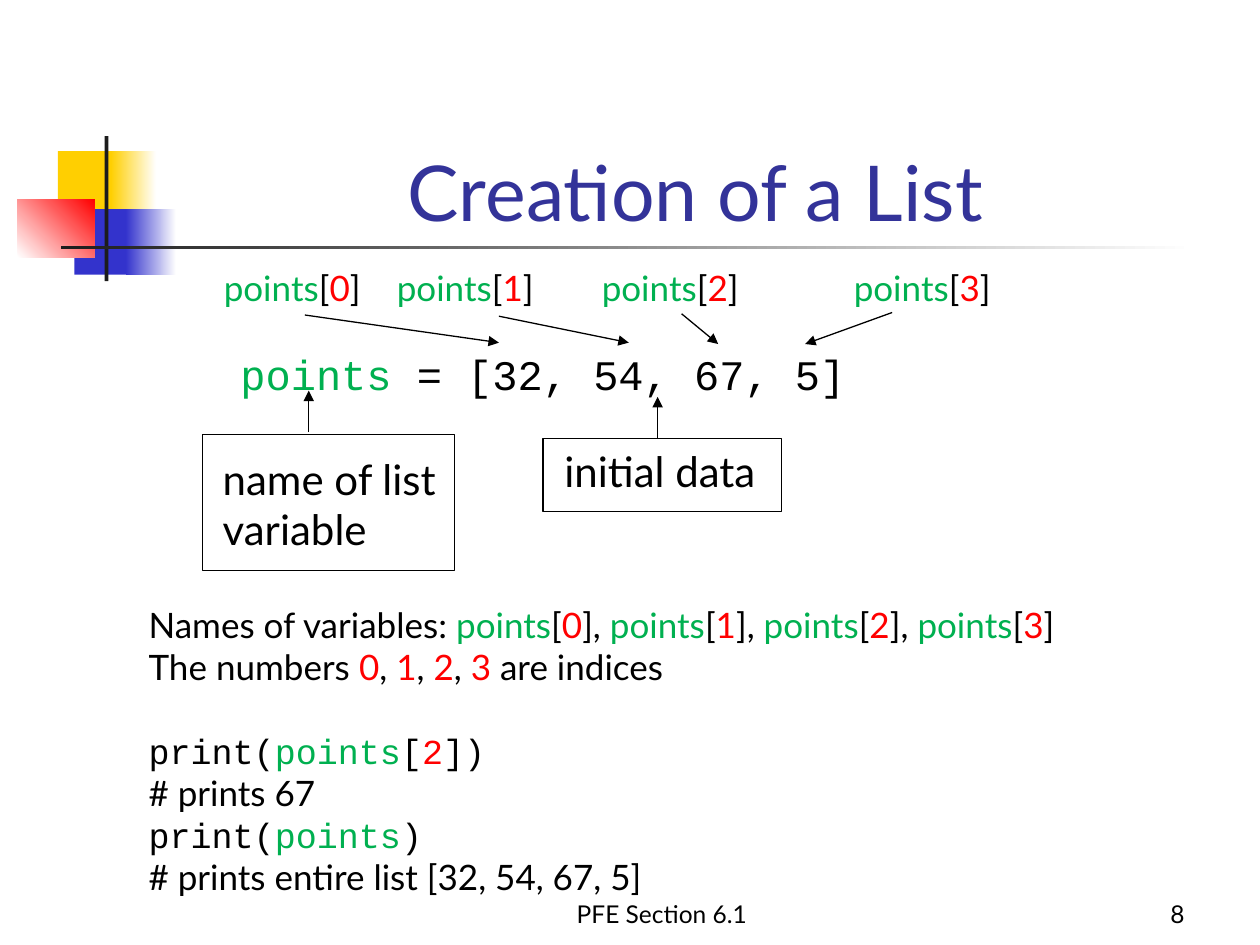
from pptx import Presentation
from pptx.dml.color import RGBColor as Rgb
from pptx.enum.shapes import MSO_CONNECTOR as Link, MSO_SHAPE as Kind
from pptx.enum.text import MSO_ANCHOR as Anchor, PP_ALIGN as Align
from pptx.oxml import parse_xml
from pptx.oxml.ns import nsdecls
from pptx.util import Pt

THEME = {
    "sans": "Lato", "mono": "Courier New",
    "title": 44, "big": 24, "text": 20, "foot": 14, "line": 0.75,
    "k": "000000", "g": "00B050", "r": "FF0000", "t": "333399",
    "gold": "FFCF01", "blue": "3333CC", "dark": "1C1C1C", "white": "FFFFFF",
}


def item(num):
    return f"|gpoints|k[|r{num}|k]"


DECOR = [
    (33.1, 86.4, 34.6, 37.4, ["gold"], 0),
    (63.4, 86.4, 25.9, 37.4, ["gold", "white"], 0),
    (42.5, 119.5, 33.1, 37.4, ["blue"], 0),
    (72, 119.5, 28.8, 37.4, ["blue", "white"], 0),
    (10.1, 113.8, 43.9, 33.1, ["white", "r"], 45),
    (59.8, 77.8, 2.2, 82.8, ["dark"], 0),
    (34.6, 140.4, 648, 2.2, ["dark", "white"], 0),
]
FRAMES = [(115.9, 248.4, 144, 77.8), (310.3, 250.6, 136.1, 41.8)]
HEADS = [120.8, 219.7, 336.8, 480.8]
ARROWS = [
    (176.4, 247, 176.4, 223.2), (375.8, 250.6, 375.8, 226.8),
    (174.2, 180, 285.1, 195.8), (285.1, 180.7, 359.3, 195.8),
    (389.5, 179.3, 410.4, 196.6), (509.8, 178.6, 460.1, 196.6),
]
NOTES = [
    ("sans", "Names of variables: " + ", ".join(item(n) for n in range(4))),
    ("sans", "The numbers " + ", ".join(f"|r{n}|k" for n in range(4)) + " are indices"),
    ("mono", f"print({item(2)})"),
    ("sans", "# prints 67"),
    ("mono", "print(|gpoints|k)"),
    ("sans", "# prints entire list [32, 54, 67, 5]"),
]
LABELS = [
    ((90.7, 49, 613.4, 90), [("sans", "|tCreation of a List")], "title", Align.CENTER, Anchor.BOTTOM),
    ((130.3, 195.8, 374.4, 54), [("mono", "|gpoints|k = [32, 54, 67, 5]")], "big", Align.LEFT, Anchor.TOP),
    ((264.2, 498.2, 228.2, 36), [("sans", "PFE Section 6.1")], "foot", Align.CENTER, Anchor.BOTTOM),
    ((534.2, 498.2, 149.8, 36), [("sans", "8")], "foot", Align.RIGHT, Anchor.BOTTOM),
    ((120.2, 255.6, 139.7, 65.5), [("sans", "name of list"), ("sans", "variable")], "big", Align.LEFT, Anchor.TOP),
    ((315.4, 251.3, 125.3, 36.7), [("sans", "initial data")], "big", Align.LEFT, Anchor.TOP),
    ((77.8, 341.3, 563, 177.1), NOTES, "text", Align.LEFT, Anchor.TOP),
] + [
    ((x, 149, 100, 31.7), [("sans", item(n))], "text", Align.LEFT, Anchor.TOP)
    for n, x in enumerate(HEADS)
]
GAPS = {"|gpoints|k = [32, 54, 67, 5]": 4.8, NOTES[2][1]: 24}


def tint(key):
    return Rgb.from_string(THEME[key])


def rect(slide, area):
    shape = slide.shapes.add_shape(Kind.RECTANGLE, *map(Pt, area))
    shape.shadow.inherit = False
    return shape


def decor(slide, x, y, wide, high, keys, angle):
    shape = rect(slide, (x, y, wide, high))
    shape.line.fill.background()
    if len(keys) == 1:
        shape.fill.solid()
        shape.fill.fore_color.rgb = tint(keys[0])
        return
    shape.fill.gradient()
    shape.fill.gradient_angle = angle
    for stop, key in zip(shape.fill.gradient_stops, keys):
        stop.color.rgb = tint(key)


def stroke(line):
    line.color.rgb = tint("k")
    line.width = Pt(THEME["line"])


def frame(slide, area):
    shape = rect(slide, area)
    shape.fill.background()
    stroke(shape.line)


def arrow(slide, ends):
    line = slide.shapes.add_connector(Link.STRAIGHT, *map(Pt, ends))
    stroke(line.line)
    line.line._get_or_add_ln().append(parse_xml(f'<a:tailEnd {nsdecls("a")} type="triangle"/>'))
    line._element.spPr.append(parse_xml(f'<a:effectLst {nsdecls("a")}/>'))


def label(slide, area, lines, size, align, anchor):
    body = slide.shapes.add_textbox(*map(Pt, area)).text_frame
    body.word_wrap = True
    body.vertical_anchor = anchor
    for row, (face, text) in enumerate(lines):
        para = body.add_paragraph() if row else body.paragraphs[0]
        para.alignment = align
        para.space_before = Pt(GAPS.get(text, 0))
        for part in ("|k" + text).split("|"):
            if len(part) > 1:
                run = para.add_run()
                run.text = part[1:]
                run.font.name = THEME[face]
                run.font.size = Pt(THEME[size])
                run.font.color.rgb = tint(part[0])


def main():
    deck = Presentation()
    deck.slide_width, deck.slide_height = Pt(720), Pt(540)
    slide = deck.slides.add_slide(deck.slide_layouts[6])
    for part in DECOR:
        decor(slide, *part)
    for area in FRAMES:
        frame(slide, area)
    for part in LABELS:
        label(slide, *part)
    for ends in ARROWS:
        arrow(slide, ends)
    deck.save("out.pptx")


if __name__ == "__main__":
    main()
